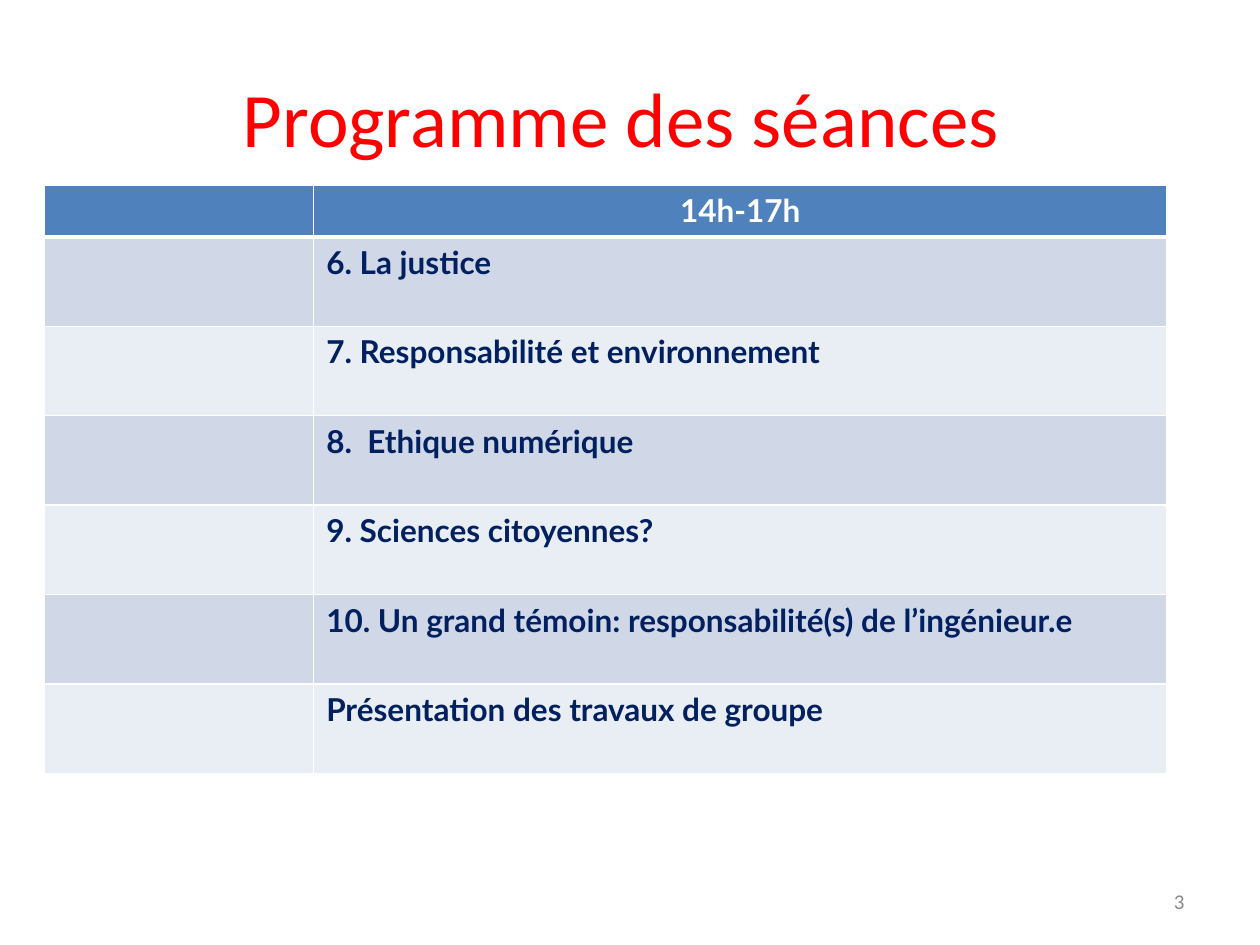
from lxml import etree
from pptx import Presentation
from pptx import util as u
from pptx.dml.color import RGBColor
from pptx.enum import text
from pptx.oxml import ns

SESSIONS = [
    "6. La justice",
    "7. Responsabilité et environnement",
    "8.  Ethique numérique",
    "9. Sciences citoyennes?",
    "10. Un grand témoin: responsabilité(s) de l’ingénieur.e",
    "Présentation des travaux de groupe",
]


def colour(value):
    return RGBColor.from_string(value)


def write(frame, words, size=18, font="Lato", ink="002060", bold=False, align=text.PP_ALIGN.LEFT):
    para = frame.paragraphs[0]
    para.alignment = align
    span = para.add_run()
    span.text = words
    span.font.size = u.Pt(size)
    span.font.name = font
    span.font.bold = bold
    span.font.color.rgb = colour(ink)


def add_border(cell, side, width, ink="FFFFFF"):
    properties = cell._tc.get_or_add_tcPr()
    line = etree.SubElement(properties, ns.qn(f"a:ln{side}"), w=str(u.Pt(width)))
    fill = etree.SubElement(line, ns.qn("a:solidFill"))
    etree.SubElement(fill, ns.qn("a:srgbClr"), val=ink)


class ProgrammeSlide:
    """Holds the style and the slide on which the programme is laid out."""

    header_fill = "4F81BD"
    band_fills = ("D0D8E8", "E9EDF4")
    column_widths = (2.14, 6.77)
    header_height = 0.41
    row_height = 0.71

    def __init__(self, deck):
        self.slide = deck.slides.add_slide(deck.slide_layouts[6])

    def add_text(self, words, left, top, width, height, **style):
        box = self.slide.shapes.add_textbox(*map(u.Inches, (left, top, width, height)))
        box.text_frame.word_wrap = True
        box.text_frame.vertical_anchor = text.MSO_ANCHOR.MIDDLE
        write(box.text_frame, words, font="Calibri", **style)

    def fill_cell(self, cell, fill, top=1, bottom=1):
        for side, width in zip("LRTB", (1, 1, top, bottom)):
            add_border(cell, side, width)
        cell.fill.solid()
        cell.fill.fore_color.rgb = colour(fill)

    def add_programme(self, left, top, heading, sessions):
        height = self.header_height + self.row_height * len(sessions)
        size = (left, top, sum(self.column_widths), height)
        table = self.slide.shapes.add_table(
            len(sessions) + 1, len(self.column_widths), *map(u.Inches, size)
        ).table
        for column, width in zip(table.columns, self.column_widths):
            column.width = u.Inches(width)
        for index, row in enumerate(table.rows):
            row.height = u.Inches(self.row_height if index else self.header_height)
            fill = self.band_fills[(index - 1) % 2] if index else self.header_fill
            for cell in row.cells:
                self.fill_cell(cell, fill, top=3 if index == 1 else 1, bottom=1 if index else 3)
        write(table.cell(0, 1).text_frame, heading, ink="FFFFFF", bold=True,
              align=text.PP_ALIGN.CENTER)
        for index, session in enumerate(sessions, 1):
            write(table.cell(index, 1).text_frame, session, bold=True)


def main():
    deck = Presentation()
    deck.slide_width, deck.slide_height = u.Inches(10), u.Inches(7.5)
    page = ProgrammeSlide(deck)
    page.add_text("Programme des séances ", 0.5, 0.3, 9, 1.25, size=44, ink="FF0000",
                  align=text.PP_ALIGN.CENTER)
    page.add_text("3", 7.17, 6.95, 2.33, 0.4, size=12, ink="8C8C8C",
                  align=text.PP_ALIGN.RIGHT)
    page.add_programme(0.35, 1.47, "14h-17h", SESSIONS)
    deck.save("out.pptx")


if __name__ == "__main__":
    main()
